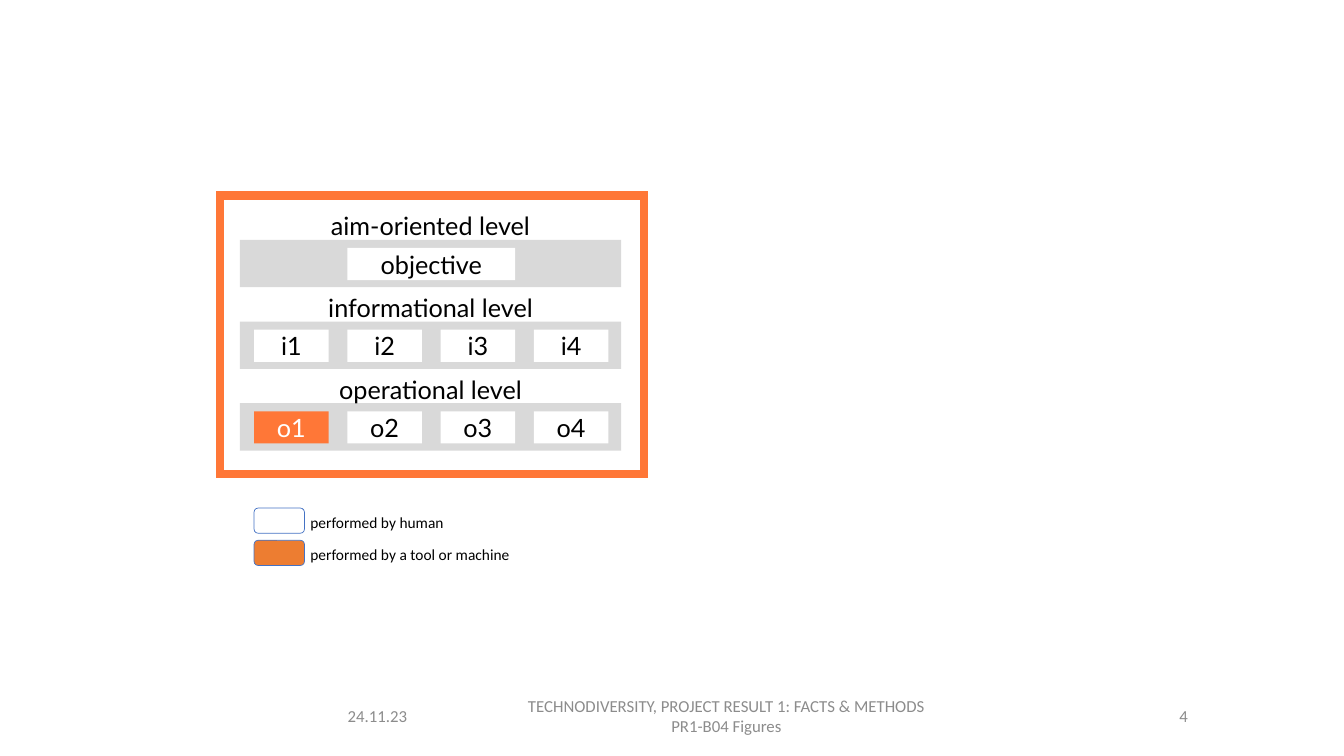
"""Build the slide of task levels performed by human or machine."""
from pptx import Presentation
from pptx.dml.color import RGBColor
from pptx.enum.shapes import MSO_SHAPE as Kind
from pptx.enum.text import MSO_ANCHOR as Anchor, PP_ALIGN as Align
from pptx.oxml.ns import qn
from pptx.util import Inches, Pt
from lxml import etree

ORANGE, GREY, WHITE, BLACK = "FF7737", "D9D9D9", "FFFFFF", "000000"
LEVELS = [
    ("aim-oriented level", 2.38, ["objective"]),
    ("informational level", 3.19, ["i1", "i2", "i3", "i4"]),
    ("operational level", 4.0, ["o1", "o2", "o3", "o4"]),
]
TOOLS = {"o1"}
LEGEND = [("performed by human", WHITE), ("performed by a tool or machine", "ED7D31")]
FOOTER = [
    ("24.11.23", 3.35, 1.34, Align.LEFT),
    ("TECHNODIVERSITY, PROJECT RESULT 1: FACTS & METHODS\nPR1-B04 Figures",
     4.86, 4.69, Align.CENTER),
    ("4", 9.77, 2.11, Align.RIGHT),
]
BAND_X, BAND_W, BAND_H = 2.38, 3.78, 0.47
CELL_X, CELL_W, CELL_H, STEP = 2.52, 0.74, 0.32, 0.925


def color(code):
    return RGBColor.from_string(code)


def write(shape, text, size, font, code, align, anchor=Anchor.TOP):
    frame = shape.text_frame
    frame.word_wrap = True
    frame.vertical_anchor = anchor
    frame.text = text
    for para in frame.paragraphs:
        para.alignment = align
        for run in para.runs:
            run.font.size = Pt(size)
            run.font.name = font
            run.font.color.rgb = color(code)


def label(slide, box, *style):
    shape = slide.shapes.add_textbox(*map(Inches, box))
    write(shape, *style)


def block(slide, kind, box, fill, line=None, width=0.5):
    shape = slide.shapes.add_shape(kind, *map(Inches, box))
    shape.shadow.inherit = False
    shape.fill.solid()
    shape.fill.fore_color.rgb = color(fill)
    if line:
        shape.line.color.rgb = color(line)
        shape.line.width = Pt(width)
    else:
        shape.line.fill.background()
    return shape


def square(slide, *style):
    shape = block(slide, Kind.ROUNDED_RECTANGLE, *style)
    shape.adjustments[0] = 0
    return shape


def cell(slide, text, x, y, width):
    tool = text in TOOLS
    shape = block(slide, Kind.RECTANGLE, (x, y, width, CELL_H), ORANGE if tool else WHITE)
    frame = shape.text_frame
    frame.margin_left = frame.margin_right = frame.margin_top = frame.margin_bottom = 0
    write(shape, text, 18, "Lato", WHITE if tool else BLACK, Align.CENTER, Anchor.MIDDLE)


def main():
    deck = Presentation()
    deck.slide_width, deck.slide_height = Inches(13.33), Inches(7.5)
    slide = deck.slides.add_slide(deck.slide_layouts[6])

    for text, x, width, align in FOOTER:
        label(slide, (x, 6.9, width, 0.4), text, 12, "Calibri", "8C8C8C", align, Anchor.MIDDLE)

    for row, (text, fill) in enumerate(LEGEND):
        y = 5.04 + row * 0.32
        label(slide, (2.98, y, 2.32, 0.29), text, 11, "Calibri", BLACK, Align.LEFT)
        block(slide, Kind.ROUNDED_RECTANGLE, (CELL_X, y, 0.5, 0.25), fill, "4472C4")

    border = square(slide, (2.18, 1.94, 4.21, 2.76), WHITE, ORANGE, 6)
    etree.SubElement(border.line._get_or_add_ln(), qn("a:miter"), lim="800000")

    for title, y, names in LEVELS:
        square(slide, (BAND_X, y, BAND_W, BAND_H), GREY)
        label(slide, (BAND_X, y - 0.34, BAND_W, 0.4), title, 18, "Lato", BLACK, Align.CENTER)
        single = len(names) == 1
        for col, name in enumerate(names):
            spot = col + 1 if single else col
            width = CELL_W + STEP if single else CELL_W
            cell(slide, name, CELL_X + spot * STEP, y + 0.08, width)

    deck.save("out.pptx")


if __name__ == "__main__":
    main()
